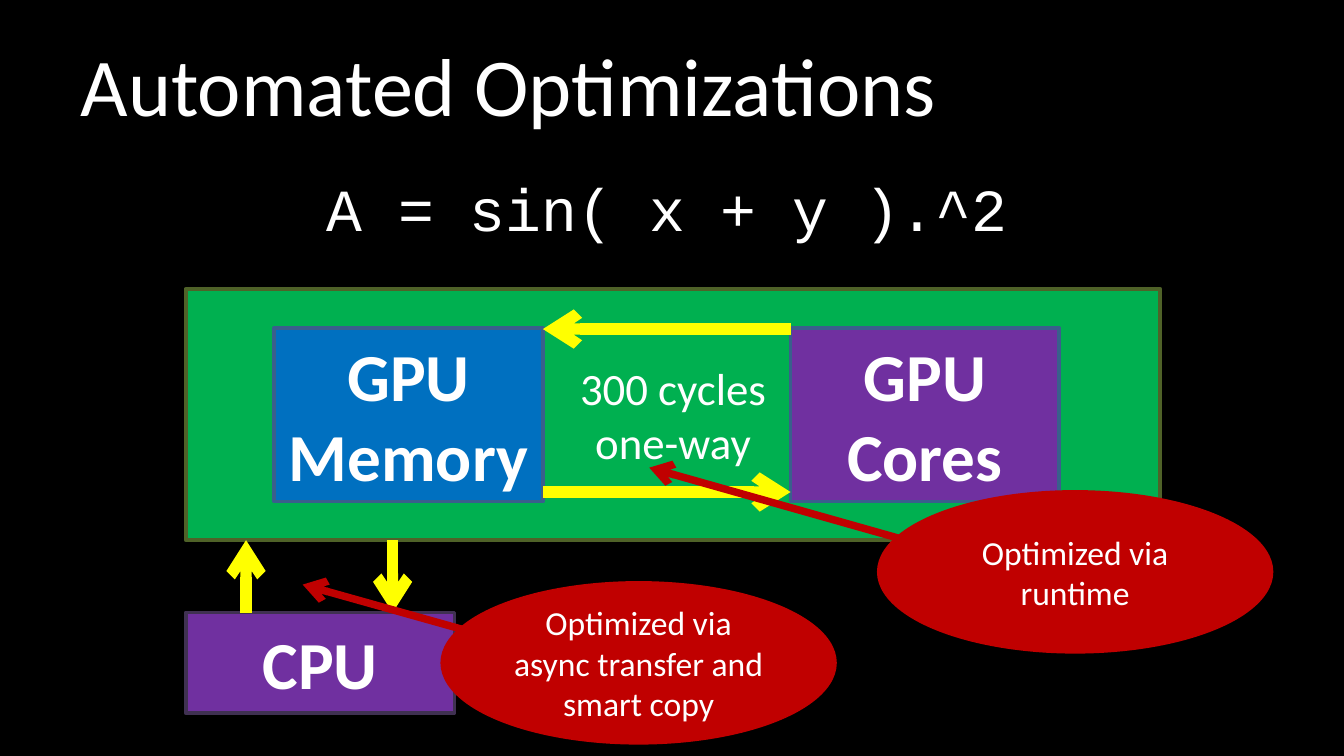
from lxml.etree import SubElement
from pptx import Presentation
from pptx.dml.color import RGBColor
from pptx.enum.shapes import MSO_CONNECTOR, MSO_SHAPE
from pptx.enum.text import MSO_ANCHOR, MSO_AUTO_SIZE, PP_ALIGN
from pptx.oxml.ns import qn
from pptx.util import Cm, Pt

COLORS = {
    "background": "000000",
    "text": "FFFFFF",
    "board": "00B050",
    "board_edge": "4F6228",
    "memory": "0070C0",
    "processor": "7030A0",
    "gpu_edge": "3A5F8C",
    "cpu_edge": "403152",
    "transfer": "FFFF00",
    "callout": "C00000",
}


def color(name):
    return RGBColor.from_string(COLORS[name])


class SlideBuilder:
    font = "Calibri"
    edge_width = 2

    def __init__(self, presentation):
        self.slide = presentation.slides.add_slide(presentation.slide_layouts[5])
        fill = self.slide.background.fill
        fill.solid()
        fill.fore_color.rgb = color("background")

    def add_lines(self, frame, lines, size, bold=False, align=PP_ALIGN.CENTER, font=None):
        for index, line in enumerate(lines):
            paragraph = frame.paragraphs[0] if index == 0 else frame.add_paragraph()
            paragraph.alignment = align
            run = paragraph.add_run()
            run.text = line
            run.font.name = font or self.font
            run.font.size = Pt(size)
            run.font.bold = bold
            run.font.color.rgb = color("text")

    def title(self, text, left, top, width, height):
        title = self.slide.shapes.title
        title.left, title.top = Cm(left), Cm(top)
        title.width, title.height = Cm(width), Cm(height)
        title.text_frame.vertical_anchor = MSO_ANCHOR.MIDDLE
        self.add_lines(title.text_frame, [text], 44, align=PP_ALIGN.LEFT)

    def formula(self, text, left, top, width, height):
        box = self.slide.shapes.add_textbox(Cm(left), Cm(top), Cm(width), Cm(height))
        box.text_frame.word_wrap = False
        box.text_frame.auto_size = MSO_AUTO_SIZE.SHAPE_TO_FIT_TEXT
        self.add_lines(box.text_frame, [text], 32, align=PP_ALIGN.LEFT, font="Courier New")

    def block(self, lines, left, top, width, height, fill, edge,
              size=36, bold=True, kind=MSO_SHAPE.RECTANGLE):
        shape = self.slide.shapes.add_shape(kind, Cm(left), Cm(top), Cm(width), Cm(height))
        shape.shadow.inherit = False
        shape.fill.solid()
        shape.fill.fore_color.rgb = color(fill)
        shape.line.color.rgb = color(edge)
        shape.line.width = Pt(self.edge_width)
        shape.text_frame.word_wrap = True
        shape.text_frame.vertical_anchor = MSO_ANCHOR.MIDDLE
        self.add_lines(shape.text_frame, lines, size, bold)

    def arrow(self, start, end, line_color="transfer", width=6):
        points = [Cm(value) for value in (*start, *end)]
        connector = self.slide.shapes.add_connector(MSO_CONNECTOR.STRAIGHT, *points)
        connector.line.color.rgb = color(line_color)
        connector.line.width = Pt(width)
        properties = connector.element.spPr
        SubElement(properties.find(qn("a:ln")), qn("a:tailEnd"), type="arrow")
        SubElement(properties, qn("a:effectLst"))

    def callout(self, lines, left, top, target):
        """Draw an ellipse with an arrow from its left side to the target."""
        self.block(lines, left, top, 7.42, 3.02, "callout", "callout",
                   size=18, bold=False, kind=MSO_SHAPE.OVAL)
        self.arrow((left + 1.14, top + 1.09), target, "callout", 4)


def main():
    presentation = Presentation()
    presentation.slide_width, presentation.slide_height = Cm(25.4), Cm(14.29)
    builder = SlideBuilder(presentation)
    builder.title("Automated Optimizations", 1.27, 0.38, 22.86, 2.39)

    board_left, board_top, board_height = 3.51, 5.46, 4.75
    board_bottom = board_top + board_height
    unit_width, gpu_top, gpu_height = 5.08, 6.2, 3.28
    memory_left, cores_left = 5.18, 14.94
    memory_right = memory_left + unit_width
    cpu_top = 11.58

    builder.block(["300 cycles", "one-way"], board_left, board_top, 18.42, board_height,
                  "board", "board_edge", size=24, bold=False)
    builder.block(["GPU Memory"], memory_left, gpu_top, unit_width, gpu_height,
                  "memory", "gpu_edge")
    builder.block(["GPU Cores"], cores_left, gpu_top, unit_width, gpu_height,
                  "processor", "gpu_edge")
    builder.arrow((memory_right, 9.3), (cores_left, 9.3))
    builder.arrow((cores_left, 6.22), (memory_right, 6.22))
    builder.formula("A = sin( x + y ).^2", 5.92, 3.12, 13.54, 1.63)

    builder.block(["CPU"], board_left, cpu_top, unit_width, 1.9, "processor", "cpu_edge")
    builder.arrow((4.65, cpu_top), (4.65, board_bottom))
    builder.arrow((7.42, board_bottom), (7.42, cpu_top))

    builder.callout(["Optimized via", "async transfer and smart copy"],
                    8.36, 11.02, (5.72, 11.05))
    builder.callout(["Optimized via", "runtime"], 16.61, 9.3, (12.27, 8.84))
    presentation.save("out.pptx")


if __name__ == "__main__":
    main()
